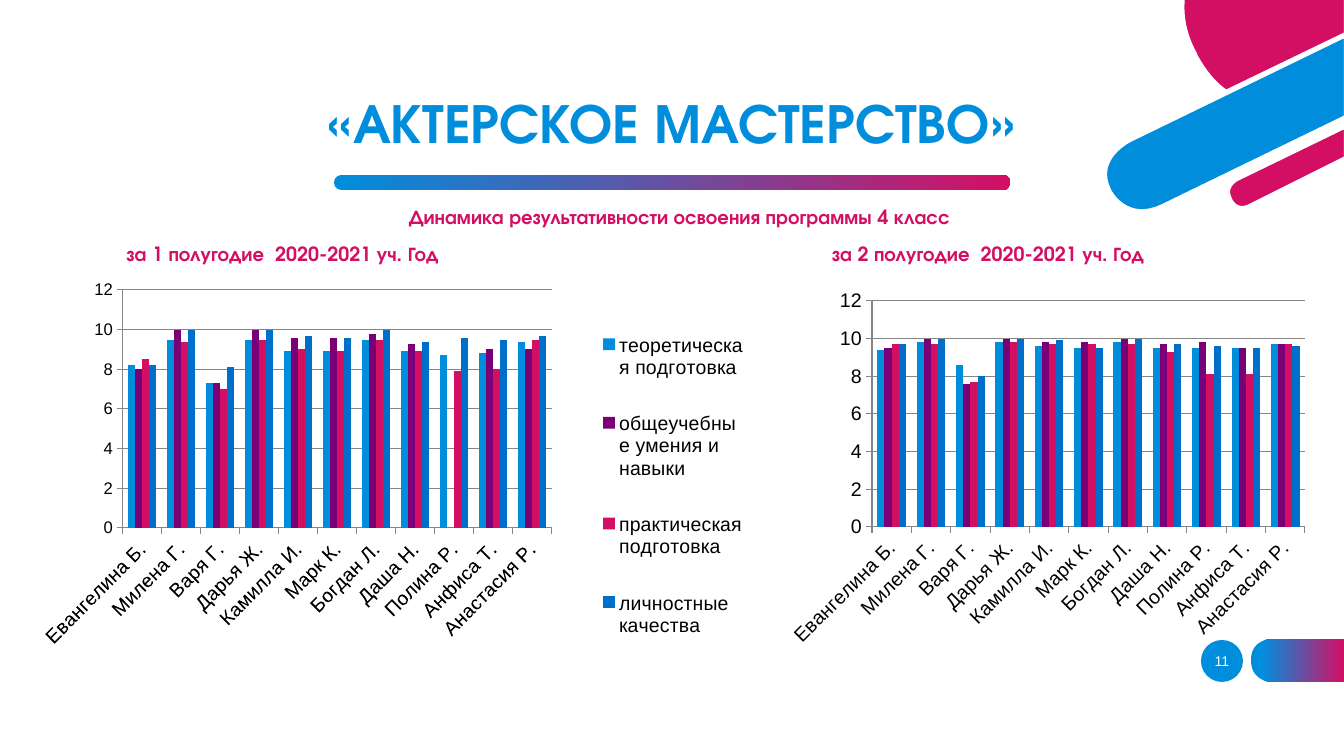
from lxml import etree
from pptx import Presentation
from pptx.chart.data import CategoryChartData
from pptx.dml.color import RGBColor
from pptx.enum.chart import XL_CHART_TYPE, XL_LEGEND_POSITION
from pptx.enum.shapes import MSO_SHAPE
from pptx.enum.text import MSO_ANCHOR, PP_ALIGN
from pptx.oxml.ns import qn
from pptx.util import Pt

COLUMNS = XL_CHART_TYPE.COLUMN_CLUSTERED
LEGEND_RIGHT = XL_LEGEND_POSITION.RIGHT
OVAL, ROUNDED = MSO_SHAPE.OVAL, MSO_SHAPE.ROUNDED_RECTANGLE
TOP, MIDDLE, BOTTOM = MSO_ANCHOR.TOP, MSO_ANCHOR.MIDDLE, MSO_ANCHOR.BOTTOM
LEFT, CENTER = PP_ALIGN.LEFT, PP_ALIGN.CENTER

EMU_PER_PX = 914400 / 100.8
BLUE, RED, PURPLE, DEEP_BLUE = "008EDC", "D30F64", "7A0078", "006FC9"
WHITE, BLACK, GRAY = "FFFFFF", "000000", "868686"
HEAD_FONT, BODY_FONT = "TeX Gyre Adventor", "Arial"

PUPILS = ["Евангелина Б.", "Милена Г.", "Варя Г.", "Дарья Ж.", "Камилла И.", "Марк К.",
          "Богдан Л.", "Даша Н.", "Полина Р.", "Анфиса Т.", "Анастасия Р."]
SERIES_COLORS = [BLUE, PURPLE, RED, DEEP_BLUE]
FIRST_HALF = {
    "теоретическая подготовка": [8.2, 9.5, 7.3, 9.5, 8.9, 8.9, 9.5, 8.9, 8.7, 8.8, 9.4],
    "общеучебные умения и навыки": [8, 10, 7.3, 10, 9.6, 9.6, 9.8, 9.3, 0, 9, 9],
    "практическая подготовка": [8.5, 9.4, 7, 9.5, 9, 8.9, 9.5, 8.9, 7.9, 8, 9.5],
    "личностные качества": [8.2, 10, 8.1, 10, 9.7, 9.6, 10, 9.4, 9.6, 9.5, 9.7],
}
SECOND_HALF = {
    "Series 1": [9.4, 9.8, 8.6, 9.8, 9.6, 9.5, 9.8, 9.5, 9.5, 9.5, 9.7],
    "Series 2": [9.5, 10, 7.6, 10, 9.8, 9.8, 10, 9.7, 9.8, 9.5, 9.7],
    "Series 3": [9.7, 9.7, 7.7, 9.8, 9.7, 9.7, 9.7, 9.3, 8.1, 8.1, 9.7],
    "Series 4": [9.7, 10, 8, 10, 9.9, 9.5, 10, 9.7, 9.6, 9.5, 9.6],
}

# Outlines: a pair is a line end, six numbers are a cubic curve.
RED_DISC = [(1196, 57), (1197, 57, 1206, 78, 1226, 92), (1346, 34), (1346, -3), (1183, -3),
            (1181, 15, 1184, 34, 1195, 54)]
BLUE_BAND = [(1130, 140), (1130, 140, 1093, 158, 1109, 190),
             (1109, 191, 1126, 224, 1163, 206), (1346, 117), (1346, 35)]
RED_BAND = [(1346, 126), (1237, 179), (1237, 179, 1223, 186, 1230, 199),
            (1230, 200, 1236, 213, 1250, 206), (1346, 158)]
PAGE_TAB = [(1272, 682), (1344, 682), (1344, 639), (1272, 639),
            (1272, 639, 1251, 639, 1251, 660), (1251, 682, 1272, 682, 1272, 682)]


def px(n):
    return round(n * EMU_PER_PX)


def rgb(color):
    return RGBColor.from_string(color)


def paint(sp, fill, outline=None):
    """Fill with one colour, or with a left-to-right gradient of (percent, colour) stops."""
    sp.shadow.inherit = False
    if isinstance(fill, str):
        sp.fill.solid()
        sp.fill.fore_color.rgb = rgb(fill)
    else:
        sp.fill.gradient()
        sp.fill.gradient_angle = 0
        for stop, (percent, color) in zip(sp.fill.gradient_stops, fill):
            stop.position = percent / 100
            stop.color.rgb = rgb(color)
    if outline:
        sp.line.color.rgb = rgb(outline)
        sp.line.width = Pt(3)
    else:
        sp.line.fill.background()


def add_preset(slide, kind, box, fill):
    sp = slide.shapes.add_shape(kind, *map(px, box))
    paint(sp, fill)
    return sp


def curve_points(start, curve, steps=16):
    x1, y1, x2, y2, x3, y3 = curve
    for i in range(1, steps + 1):
        t = i / steps
        weights = ((1 - t) ** 3, 3 * t * (1 - t) ** 2, 3 * t * t * (1 - t), t ** 3)
        yield (sum(w * x for w, x in zip(weights, (start[0], x1, x2, x3))),
               sum(w * y for w, y in zip(weights, (start[1], y1, y2, y3))))


def add_outline(slide, outline, fill, edge=None):
    points = [outline[0]]
    for part in outline[1:]:
        points += [part] if len(part) == 2 else curve_points(points[-1], part)
    emu = [(px(x), px(y)) for x, y in points]
    builder = slide.shapes.build_freeform(*emu[0], scale=1.0)
    builder.add_line_segments(emu[1:], close=True)
    paint(builder.convert_to_shape(), fill, edge)


def write(p, text, font, size, color, bold=False, align=CENTER):
    p.alignment = align
    r = p.add_run()
    r.text = text
    r.font.name, r.font.size, r.font.bold = font, Pt(size), bold
    r.font.color.rgb = rgb(color)


def add_text_frame(slide, box, anchor):
    tf = slide.shapes.add_textbox(*map(px, box)).text_frame
    tf.word_wrap = True
    tf.vertical_anchor = anchor
    return tf


def add_tab_stop(p, position):
    tabs = etree.SubElement(p._p.get_or_add_pPr(), qn("a:tabLst"))
    etree.SubElement(tabs, qn("a:tab"), pos=str(px(position)), algn="l")


def set_layout(element, after, chart_box, box, inner=False):
    """Place a plot area or legend, given in slide px, inside its chart."""
    left, top, width, height = chart_box
    x, y, w, h = box
    shares = ((x - left) / width, (y - top) / height, w / width, h / height)
    for old in element.findall(qn("c:layout")):
        element.remove(old)
    layout = etree.Element(qn("c:layout"))
    manual = etree.SubElement(layout, qn("c:manualLayout"))
    settings = [("layoutTarget", "inner")] if inner else []
    settings += [("xMode", "edge"), ("yMode", "edge"), *zip("xywh", shares)]
    for tag, value in settings:
        etree.SubElement(manual, qn("c:" + tag), val=str(value))
    element.insert(after, layout)


def style_axis(axis, size):
    axis.tick_labels.font.size = Pt(size)
    axis.format.line.color.rgb = rgb(GRAY)
    axis.format.line.width = Pt(0.75)


def add_results_chart(slide, box, results, plot, value_size, legend=None):
    data = CategoryChartData()
    data.categories = PUPILS
    for name, values in results.items():
        data.add_series(name, values)
    chart = slide.shapes.add_chart(COLUMNS, *map(px, box), data).chart
    chart.has_title = False
    chart.font.name, chart.font.size = BODY_FONT, Pt(14)
    chart.font.color.rgb = rgb(BLACK)
    columns = chart.plots[0]
    columns.gap_width, columns.overlap = 150, 0
    columns.vary_by_categories = False
    for series, color in zip(columns.series, SERIES_COLORS):
        series.format.fill.solid()
        series.format.fill.fore_color.rgb = rgb(color)
    style_axis(chart.category_axis, 14)
    names = chart.category_axis._element.find(qn("c:txPr")).find(qn("a:bodyPr"))
    names.set("rot", "-2700000")
    axis = chart.value_axis
    style_axis(axis, value_size)
    axis.minimum_scale, axis.maximum_scale, axis.major_unit = 0, 12, 2
    axis.major_gridlines.format.line.color.rgb = rgb(GRAY)
    axis.major_gridlines.format.line.width = Pt(0.75)
    set_layout(chart._chartSpace.chart.plotArea, 0, box, plot, inner=True)
    chart.has_legend = legend is not None
    if legend:
        chart.legend.position = LEGEND_RIGHT
        chart.legend.include_in_layout = False
        chart.legend.font.size = Pt(14)
        set_layout(chart.legend._element, 1, box, legend)


def main():
    prs = Presentation()
    prs.slide_width, prs.slide_height = px(1344), px(756)
    slide = prs.slides.add_slide(prs.slide_layouts[6])

    add_outline(slide, PAGE_TAB, [(12, BLUE), (100, RED)])
    bar = add_preset(slide, ROUNDED, (334, 175, 676, 15), [(0, BLUE), (100, RED)])
    bar.adjustments[0] = 0.5
    for outline, color in ((RED_DISC, RED), (BLUE_BAND, BLUE), (RED_BAND, RED)):
        add_outline(slide, outline, color, WHITE)

    title = add_text_frame(slide, (92, 87, 1159, 74), BOTTOM).paragraphs[0]
    title.line_spacing = 0.9
    write(title, "«АКТЕРСКОЕ МАСТЕРСТВО»", HEAD_FONT, 40, BLUE, True)

    tf = add_text_frame(slide, (111, 200, 1137, 79), TOP)
    write(tf.paragraphs[0], "Динамика результативности освоения программы 4 класс",
          HEAD_FONT, 14, RED, True)
    p = tf.add_paragraph()
    p.space_before = Pt(9.5)
    add_tab_stop(p, 711)
    write(p, " за 1 полугодие  2020-2021 уч. Год\tза 2 полугодие  2020-2021 уч. Год",
          HEAD_FONT, 14, RED, True, LEFT)

    add_results_chart(slide, (41, 272, 717, 422), FIRST_HALF, (117, 290, 433, 238), 12,
                      legend=(601, 300, 143, 371))
    add_results_chart(slide, (779, 282, 537, 373), SECOND_HALF, (872, 301, 433, 226), 14)

    tf = add_preset(slide, OVAL, (1201, 640, 42, 42), BLUE).text_frame
    tf.margin_left = tf.margin_right = 0
    tf.vertical_anchor = MIDDLE
    write(tf.paragraphs[0], "11", BODY_FONT, 10, WHITE)
    prs.save("out.pptx")


if __name__ == "__main__":
    main()
